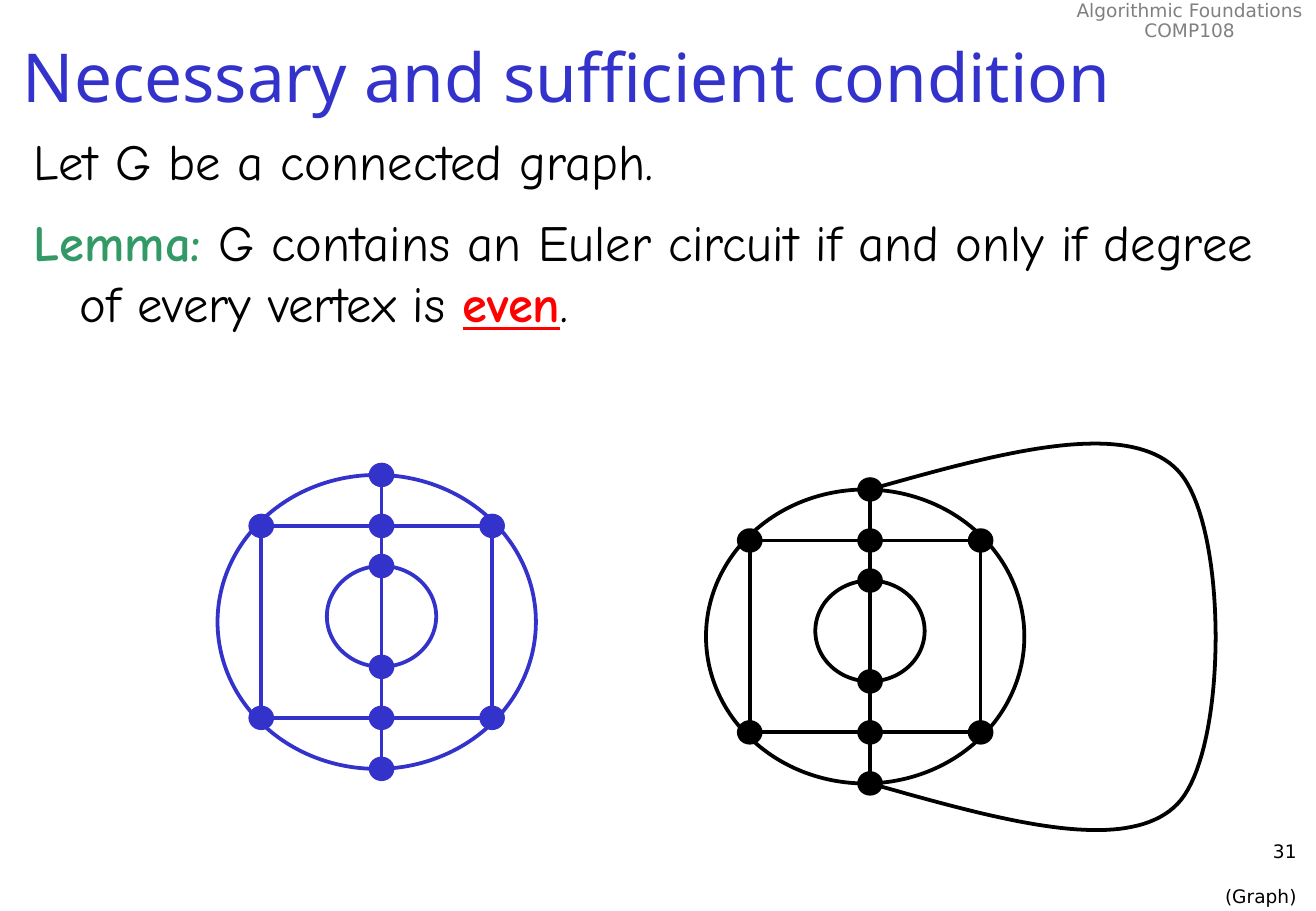
from lxml import etree
from pptx import Presentation
from pptx.dml.color import RGBColor
from pptx.enum.shapes import MSO_CONNECTOR as Link, MSO_SHAPE as Form
from pptx.enum.text import MSO_ANCHOR as Anchor, PP_ALIGN as Align
from pptx.oxml.ns import qn
from pptx.util import Inches, Pt

BLACK = RGBColor(0, 0, 0)
BLUE = RGBColor(0x33, 0x33, 0xCC)
GREEN = RGBColor(0x33, 0x99, 0x66)
RED = RGBColor(0xFF, 0, 0)
GRAY = RGBColor(0x80, 0x80, 0x80)
SANS, NOTO, COMIC = "DejaVu Sans", "Noto Sans", "Comic Neue"
HUB, SIDES, ROWS = 1.35, (0.36, 2.26), (0.42, 2.0)
RING, CORE = (2.62, 2.42), (0.9, 0.83)
DOT = (0.18, 0.17)


class Board:
    """Hold the slide, the line style and the group being drawn."""

    def __init__(self, slide):
        self.slide = slide
        self.line = Pt(2.25)

    def start(self, color):
        self.color = color
        self.shapes = self.slide.shapes.add_group_shape().shapes

    def text(self, box, paras, font, size, align=Align.LEFT, wrap=True,
             anchor=Anchor.TOP, space=None, before=0, after=0, hang=0):
        frame = self.slide.shapes.add_textbox(*map(Inches, box)).text_frame
        frame.word_wrap = wrap
        frame.vertical_anchor = anchor
        for i, runs in enumerate(paras):
            para = frame.add_paragraph() if i else frame.paragraphs[0]
            para.alignment = align
            para.line_spacing = space
            para.space_before = Pt(before)
            para.space_after = Pt(after)
            if hang:
                props = para._p.get_or_add_pPr()
                props.set("marL", str(Inches(hang)))
                props.set("indent", str(-Inches(hang)))
            for words, color, *marks in runs:
                run = para.add_run()
                run.text = words
                run.font.name = font
                run.font.size = Pt(size)
                run.font.color.rgb = color
                run.font.bold = "bold" in marks
                run.font.underline = "under" in marks

    def style(self, shape, solid=False):
        shape.shadow.inherit = False
        if solid:
            shape.fill.solid()
            shape.fill.fore_color.rgb = self.color
        else:
            shape.fill.background()
        shape.line.color.rgb = self.color
        shape.line.width = self.line

    def shape(self, form, x, y, w, h, solid=False):
        box = map(Inches, (x, y, w, h))
        self.style(self.shapes.add_shape(form, *box), solid)

    def edge(self, *ends):
        edge = self.shapes.add_connector(Link.STRAIGHT, *map(Inches, ends))
        edge.line.color.rgb = self.color
        edge.line.width = self.line
        etree.SubElement(edge._element.spPr, qn("a:effectLst"))

    def curve(self, start, arcs, steps=40):
        points = [start]
        for b, c, d in arcs:
            a = points[-1]
            for i in range(1, steps + 1):
                t = i / steps
                u = 1 - t
                points.append(tuple(
                    u**3 * p + 3 * u * u * t * q + 3 * u * t * t * r + t**3 * s
                    for p, q, r, s in zip(a, b, c, d)))
        first, *rest = [(Inches(x), Inches(y)) for x, y in points]
        trace = self.shapes.build_freeform(*first)
        trace.add_line_segments(rest, close=False)
        self.style(trace.convert_to_shape())

    def graph(self, x, y, color, arcs=()):
        self.start(color)
        mid = x + HUB
        left, right = SIDES
        top, low = ROWS
        self.shape(Form.OVAL, x, y, *RING)
        self.shape(Form.RECTANGLE, x + left, y + top, right - left, low - top)
        self.edge(mid, y, mid, y + RING[1])
        self.shape(Form.OVAL, mid - CORE[0] / 2, y + 0.75, *CORE)
        if arcs:
            self.curve((mid, y), arcs)
        dots = [(HUB, dy) for dy in (0, top, 0.75, 1.58, low, RING[1])]
        dots += [(dx, dy) for dy in ROWS for dx in SIDES]
        for dx, dy in dots:
            self.shape(Form.OVAL, x + dx - DOT[0] / 2, y + dy - DOT[1] / 2,
                       *DOT, solid=True)


def main():
    deck = Presentation()
    deck.slide_width, deck.slide_height = Inches(10.83), Inches(7.5)
    board = Board(deck.slides.add_slide(deck.slide_layouts[6]))
    board.text((8.75, -0.04, 2.08, 0.43),
               [[("Algorithmic Foundations", GRAY)], [("COMP108", GRAY)]],
               SANS, 11, Align.CENTER, wrap=False, space=0.9)
    board.text((8.51, 6.87, 2.26, 0.5),
               [[("31", BLACK)], [("(Graph)", BLACK)]],
               SANS, 11, Align.RIGHT, after=6.5, before=6.5)
    board.text((0.09, 0, 10.74, 1.25),
               [[("Necessary and sufficient condition", BLUE)]],
               NOTO, 40, anchor=Anchor.MIDDLE)
    lemma = [
        ("Lemma:", GREEN, "bold"),
        (" G contains an Euler circuit if and only if degree of every"
         " vertex is ", BLACK),
        ("even", RED, "bold", "under"),
        (".", BLACK),
    ]
    board.text((0.18, 1.02, 10.65, 6.31),
               [[("Let G be a connected graph.", BLACK)], lemma],
               COMIC, 30, before=6, after=6, hang=0.38)
    loop = [
        ((8.22, 3.73), (9.27, 3.44), (9.69, 3.87)),
        ((10.11, 4.3), (10.11, 6.19), (9.69, 6.62)),
        ((9.27, 7.05), (8.22, 6.75), (7.16, 6.45)),
    ]
    board.graph(5.81, 4.03, BLACK, loop)
    board.graph(1.79, 3.91, BLUE)
    deck.save("out.pptx")


if __name__ == "__main__":
    main()
